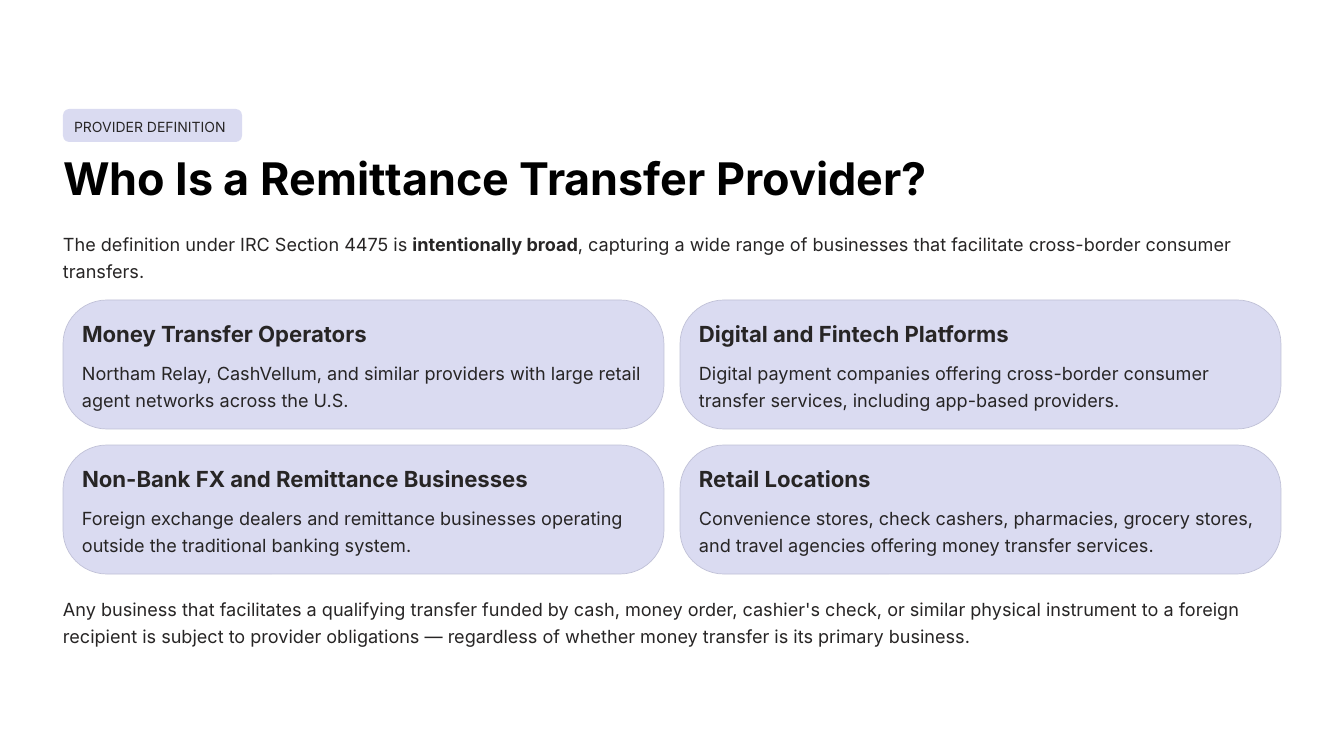
import pptx
import pptx.util
import pptx.dml.color
import pptx.enum.shapes
import pptx.enum.text

RGBColor = pptx.dml.color.RGBColor
WHITE = RGBColor(0xFF, 0xFF, 0xFF)
BLACK = RGBColor(0x00, 0x00, 0x00)
INK = RGBColor(0x27, 0x25, 0x25)
LAVENDER = RGBColor(0xDA, 0xDB, 0xF1)
EDGE = RGBColor(0xC0, 0xC1, 0xD7)

FONT = "Inter"
LEFT, WIDTH = 63, 1217
CARD_TOP, CARD_W, CARD_H, GAP, PAD = 300, 601, 129, 16, 19

# Heading, heading width, description
CARDS = [
    ("Money Transfer Operators", 291,
     "Northam Relay, CashVellum, and similar providers with large "
     "retail agent networks across the U.S."),
    ("Digital and Fintech Platforms", 318,
     "Digital payment companies offering cross-border consumer "
     "transfer services, including app-based providers."),
    ("Non-Bank FX and Remittance Businesses", 456,
     "Foreign exchange dealers and remittance businesses operating "
     "outside the traditional banking system."),
    ("Retail Locations", 227,
     "Convenience stores, check cashers, pharmacies, grocery stores, "
     "and travel agencies offering money transfer services."),
]


def px(n):
    return pptx.util.Emu(round(n * 914400 / 84))


class Deck:
    def __init__(self):
        self.prs = pptx.Presentation()
        self.prs.slide_width, self.prs.slide_height = px(1344), px(756)
        self.s = self.prs.slides.add_slide(self.prs.slide_layouts[5])
        fill = self.s.background.fill
        fill.solid()
        fill.fore_color.rgb = WHITE

    def set_runs(self, sp, runs, size, leading, color=INK, wrap=True):
        """Fill a shape with one paragraph of (text, bold) runs."""
        tf = sp.text_frame
        tf.margin_left = tf.margin_right = tf.margin_top = tf.margin_bottom = 0
        tf.auto_size = pptx.enum.text.MSO_AUTO_SIZE.NONE
        tf.vertical_anchor = pptx.enum.text.MSO_ANCHOR.TOP
        tf.word_wrap = wrap
        p = tf.paragraphs[0]
        p.alignment = pptx.enum.text.PP_ALIGN.LEFT
        p.line_spacing = pptx.util.Pt(leading)
        for text, bold in runs:
            r = p.add_run()
            r.text = text
            r.font.name, r.font.size = FONT, pptx.util.Pt(size)
            r.font.bold = bold
            r.font.color.rgb = color

    def title(self, x, y, w, h, text):
        sp = self.s.shapes.title
        sp.left, sp.top, sp.width, sp.height = map(px, (x, y, w, h))
        self.set_runs(sp, [(text, True)], 38.5, 48.5, BLACK, wrap=False)

    def text(self, x, y, w, h, runs, size=15.5, leading=23, wrap=True):
        sp = self.s.shapes.add_textbox(*map(px, (x, y, w, h)))
        self.set_runs(sp, runs, size, leading, wrap=wrap)

    def panel(self, x, y, w, h, corner, edge=None):
        sp = self.s.shapes.add_shape(
            pptx.enum.shapes.MSO_SHAPE.ROUNDED_RECTANGLE, *map(px, (x, y, w, h)))
        sp.adjustments[0] = corner
        sp.shadow.inherit = False
        sp.fill.solid()
        sp.fill.fore_color.rgb = LAVENDER
        if edge is None:
            sp.line.fill.background()
        else:
            sp.line.color.rgb = edge
            sp.line.width = pptx.util.Pt(0.6)

    def card(self, x, y, heading, heading_w, body):
        self.panel(x, y, CARD_W, CARD_H, 0.34, EDGE)
        self.text(x + PAD, y + PAD, heading_w, 29, [(heading, True)],
                  19, 24, wrap=False)
        self.text(x + PAD, y + 57, CARD_W - 2 * PAD, 55, [(body, False)])


def main():
    deck = Deck()

    # Badge and title
    deck.panel(LEFT, 109, 179, 33, 0.19)
    deck.text(74, 114, 157, 22, [("PROVIDER DEFINITION", False)],
              12, 18.5, wrap=False)
    deck.title(LEFT, 148, 872, 56, "Who Is a Remittance Transfer Provider?")

    # Introduction
    deck.text(LEFT, 228, WIDTH, 55, [
        ("The definition under IRC Section 4475 is ", False),
        ("intentionally broad", True),
        (", capturing a wide range of businesses that facilitate "
         "cross-border consumer transfers.", False),
    ])

    # Two by two provider cards
    for i, card in enumerate(CARDS):
        row, col = divmod(i, 2)
        deck.card(LEFT + col * (CARD_W + GAP), CARD_TOP + row * (CARD_H + GAP),
                  *card)

    # Closing statement
    deck.text(LEFT, 593, WIDTH, 55, [
        ("Any business that facilitates a qualifying transfer funded by cash, "
         "money order, cashier's check, or similar physical instrument to a "
         "foreign recipient is subject to provider obligations — regardless "
         "of whether money transfer is its primary business.", False),
    ])

    deck.prs.save("out.pptx")


if __name__ == "__main__":
    main()
